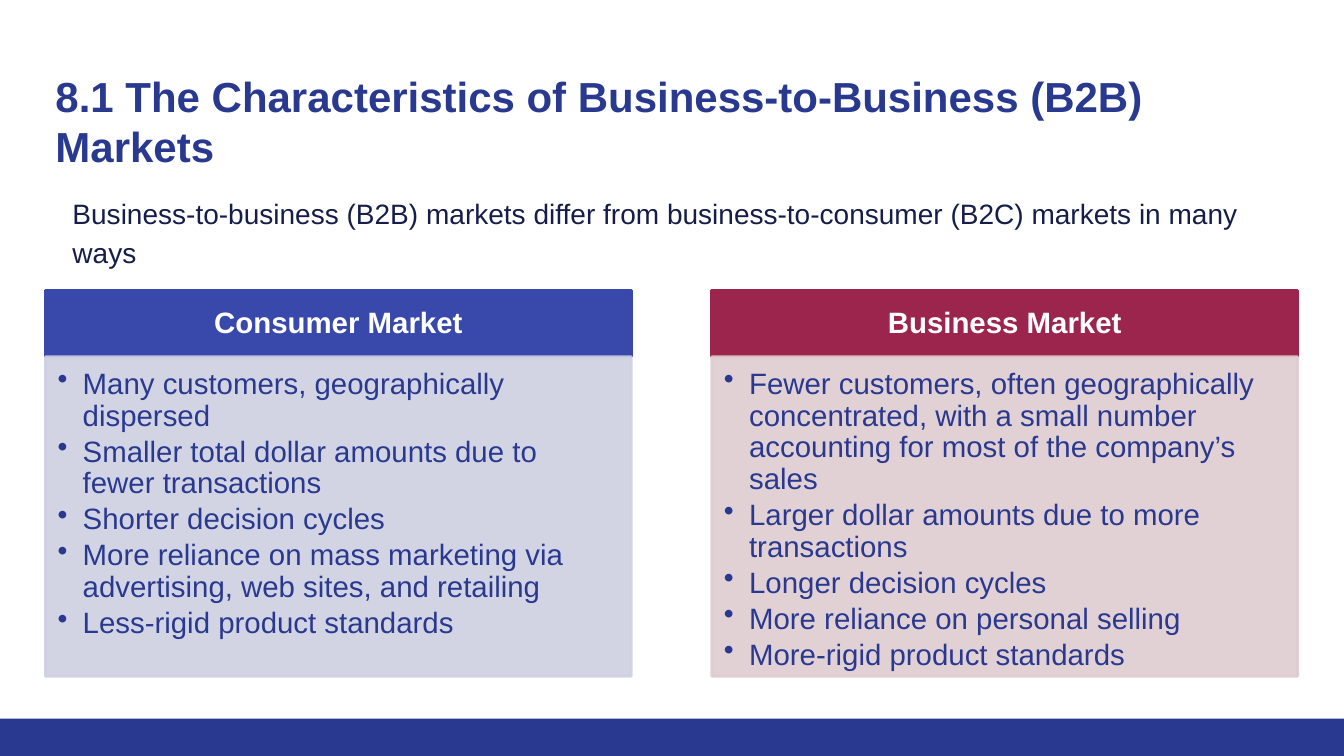
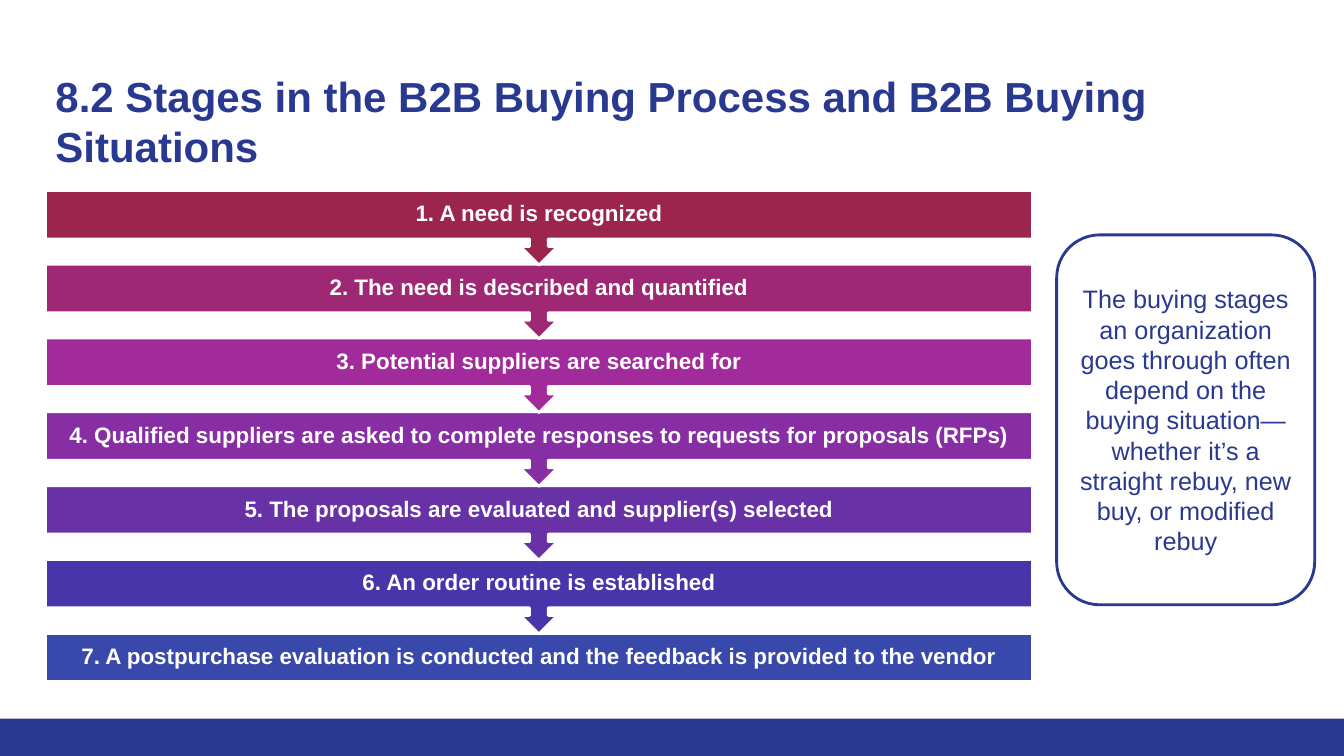
from lxml.etree import SubElement
from pptx import Presentation
from pptx.dml.color import RGBColor
from pptx.enum.shapes import MSO_SHAPE
from pptx.enum.text import MSO_ANCHOR, MSO_AUTO_SIZE, PP_ALIGN
from pptx.oxml.ns import qn
from pptx.util import Inches, Pt

FONT = "Arial"
NAVY, INK, WHITE = "2A3990", "151D48", "FFFFFF"
BLUE, RED = "3949AB", "9C254D"

# Lengths are percentages of the slide's width and height.
LEFT, CONTENT_WIDTH = 3.38, 93.17
CARD_WIDTH, CARD_TOP, HEADER_HEIGHT, LIST_HEIGHT = 43.59, 38.4, 8.8, 42.27
STAGE_TOP, STAGE_PITCH, STAGE_WIDTH = 25.2, 9.76, 73.44
BAR_HEIGHT, CALLOUT_HEIGHT = 6.4, 9.87

CENTERED = {"alignment": PP_ALIGN.CENTER}
TIGHT = {"line_spacing": 0.9}

MARKETS = [
    ("Consumer Market", BLUE, "CED0E2", [
        "Many customers, geographically dispersed",
        "Smaller total dollar amounts due to fewer transactions",
        "Shorter decision cycles",
        "More reliance on mass marketing via advertising, web sites, and retailing",
        "Less-rigid product standards",
    ]),
    ("Business Market", RED, "DECDD0", [
        "Fewer customers, often geographically concentrated, with a small number "
        "accounting for most of the company’s sales",
        "Larger dollar amounts due to more transactions",
        "Longer decision cycles",
        "More reliance on personal selling",
        "More-rigid product standards",
    ]),
]

STAGES = [
    ("A need is recognized", RED),
    ("The need is described and quantified", "9F2874"),
    ("Potential suppliers are searched for", "A12B9A"),
    ("Qualified suppliers are asked to complete responses to requests for "
     "proposals (RFPs)", "882EA4"),
    ("The proposals are evaluated and supplier(s) selected", "6832A6"),
    ("An order routine is established", "4835A9"),
    ("A postpurchase evaluation is conducted and the feedback is provided "
     "to the vendor", BLUE),
]


def apply(target, values):
    for name, value in values.items():
        setattr(target, name, value)


def paint(color_format, color):
    color_format.rgb = RGBColor.from_string(color)


def set_opacity(shape, percent):
    """Apply one opacity to the fill and the outline."""
    for color in shape.element.spPr.iter(qn("a:srgbClr")):
        SubElement(color, qn("a:alpha"), val=str(percent * 1000))


class Deck:
    """Holds the shared style and the slide being filled."""

    def __init__(self):
        self.presentation = Presentation()
        apply(self.presentation, {"slide_width": Inches(13.33),
                                  "slide_height": Inches(7.5)})
        self.page = None

    def area(self, left, top, width, height):
        """Turn percentages of the slide into lengths."""
        across = self.presentation.slide_width / 100
        down = self.presentation.slide_height / 100
        return (round(left * across), round(top * down),
                round(width * across), round(height * down))

    def start_page(self, title):
        layout = self.presentation.slide_layouts.get_by_name("Title Only")
        self.page = self.presentation.slides.add_slide(layout)
        self.shape(MSO_SHAPE.RECTANGLE, (0, 95.07, 100, 4.93), NAVY)
        box = self.page.shapes.title
        place = self.area(LEFT, 8, CONTENT_WIDTH, 11.87)
        apply(box, dict(zip(("left", "top", "width", "height"), place)))
        self.set_text(box, [title], 30, NAVY, bold=True,
                      para_format={"alignment": PP_ALIGN.LEFT})

    def set_text(self, box, lines, size, color, bold=False, anchor=MSO_ANCHOR.TOP,
                 insets=(0.1, 0.1, 0.1, 0.1), para_format=None, indent=None,
                 bullet=None):
        """Fill a box; insets run left, top, right, bottom in inches."""
        frame = box.text_frame
        apply(frame, {"word_wrap": True, "auto_size": MSO_AUTO_SIZE.NONE,
                      "vertical_anchor": anchor})
        sides = ("margin_left", "margin_top", "margin_right", "margin_bottom")
        apply(frame, dict(zip(sides, map(Inches, insets))))
        frame.text = "\n".join(lines)
        for para in frame.paragraphs:
            apply(para, para_format or {})
            apply(para.font, {"name": FONT, "size": Pt(size), "bold": bold})
            paint(para.font.color, color)
            if indent:
                properties = para._p.get_or_add_pPr()
                margin, first = map(Inches, indent)
                properties.set("marL", str(margin))
                properties.set("indent", str(first))
                if bullet:
                    mark = SubElement(properties, qn("a:buChar"), char=bullet)
                    properties.find(qn("a:defRPr")).addprevious(mark)

    def shape(self, kind, place, fill, line=None):
        box = self.page.shapes.add_shape(kind, *self.area(*place))
        box.shadow.inherit = False
        box.fill.solid()
        paint(box.fill.fore_color, fill)
        if line:
            box.line.width = Pt(2)
            paint(box.line.color, line)
        else:
            box.line.fill.background()
        return box

    def lead(self, text):
        place = self.area(LEFT, 24, CONTENT_WIDTH, 14.4)
        box = self.page.shapes.add_textbox(*place)
        self.set_text(box, [text], 20, INK, indent=(0.17, 0),
                      para_format={"line_spacing": 1.15})

    def market_card(self, left, heading, color, tint, points):
        header = self.shape(MSO_SHAPE.RECTANGLE,
                            (left, CARD_TOP, CARD_WIDTH, HEADER_HEIGHT), color, color)
        self.set_text(header, [heading], 21, WHITE, bold=True,
                      anchor=MSO_ANCHOR.MIDDLE, insets=(0.16, 0.09, 0.16, 0.09),
                      para_format=CENTERED | TIGHT)
        body = self.shape(MSO_SHAPE.RECTANGLE,
                          (left, CARD_TOP + HEADER_HEIGHT, CARD_WIDTH, LIST_HEIGHT),
                          tint, tint)
        set_opacity(body, 90)
        self.set_text(body, points, 21, NAVY, insets=(0.12, 0.12, 0.16, 0.18),
                      indent=(0.25, -0.25), bullet="•",
                      para_format=TIGHT | {"alignment": PP_ALIGN.LEFT,
                                           "space_after": Pt(3)})

    def stage(self, number, text, color, is_last):
        kind, height = ((MSO_SHAPE.RECTANGLE, BAR_HEIGHT) if is_last
                        else (MSO_SHAPE.DOWN_ARROW_CALLOUT, CALLOUT_HEIGHT))
        top = STAGE_TOP + (number - 1) * STAGE_PITCH
        box = self.shape(kind, (LEFT, top, STAGE_WIDTH, height), color, WHITE)
        self.set_text(box, [f"{number}. {text}"], 16, WHITE, bold=True,
                      anchor=MSO_ANCHOR.MIDDLE, insets=(0.12, 0.05, 0.12, 0.05),
                      para_format=CENTERED | TIGHT)

    def note(self, text):
        box = self.shape(MSO_SHAPE.ROUNDED_RECTANGLE,
                         (78.62, 31.07, 19.2, 48.93), WHITE, NAVY)
        self.set_text(box, [text], 18, NAVY, anchor=MSO_ANCHOR.MIDDLE,
                      insets=(0.1, 0.05, 0.1, 0.05), para_format=CENTERED)


def main():
    deck = Deck()

    deck.start_page("8.1 The Characteristics of Business-to-Business (B2B) Markets")
    deck.lead("Business-to-business (B2B) markets differ from "
              "business-to-consumer (B2C) markets in many ways")
    card_step = CONTENT_WIDTH - CARD_WIDTH
    for column, market in enumerate(MARKETS):
        deck.market_card(LEFT + column * card_step, *market)

    deck.start_page("8.2 Stages in the B2B Buying Process and B2B Buying Situations")
    # Last stage first, so that each arrow lies over the bar below it.
    for number, (text, color) in reversed(list(enumerate(STAGES, start=1))):
        deck.stage(number, text, color, is_last=number == len(STAGES))
    deck.note("The buying stages an organization goes through often depend on the "
              "buying situation—whether it’s a straight rebuy, new buy, or modified rebuy")

    deck.presentation.save("out.pptx")


if __name__ == "__main__":
    main()
